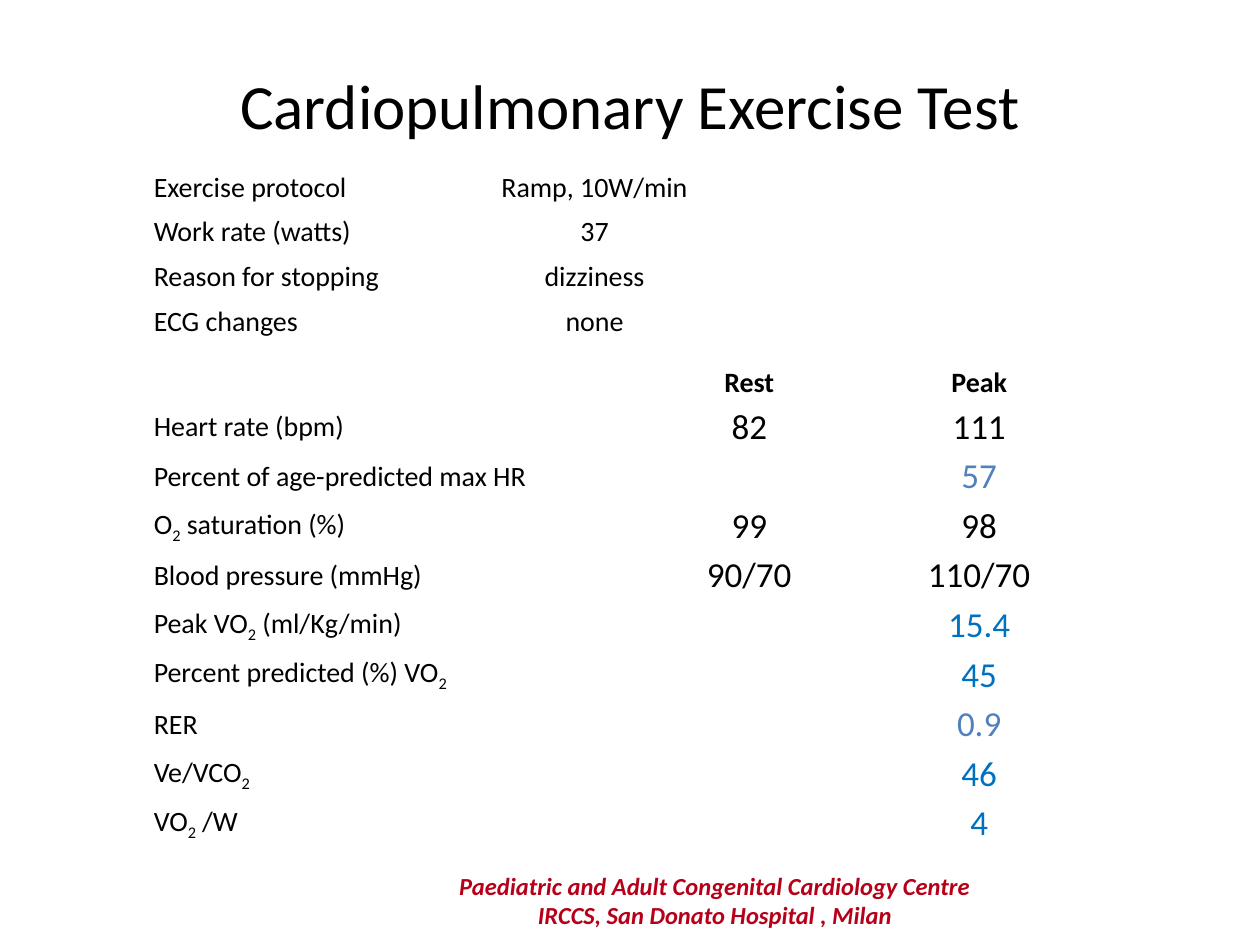
import pptx
import pptx.dml.color
import pptx.enum.text
import pptx.util

Cm = pptx.util.Cm
Pt = pptx.util.Pt
ALIGN = pptx.enum.text.PP_ALIGN
MIDDLE = pptx.enum.text.MSO_ANCHOR.MIDDLE

BLACK = "000000"
SOFT_BLUE = "4F81BD"
BLUE = "0070C0"
RED = "B60019"

PROTOCOL_ROWS = [
    ("Exercise protocol", "Ramp, 10W/min"),
    ("Work rate (watts)", "37"),
    ("Reason for stopping", "dizziness"),
    ("ECG changes", "none"),
]

# Label, value at rest, value at peak, colour of the peak value
RESULT_ROWS = [
    ("Heart rate (bpm)", "82", "111", BLACK),
    ("Percent of age-predicted max HR", "", "57", SOFT_BLUE),
    ("O₂ saturation (%)", "99", "98", BLACK),
    ("Blood pressure (mmHg)", "90/70", "110/70", BLACK),
    ("Peak VO₂ (ml/Kg/min)", "", "15.4", BLUE),
    ("Percent predicted (%) VO₂", "", "45", BLUE),
    ("RER", "", "0.9", SOFT_BLUE),
    ("Ve/VCO₂", "", "46", BLUE),
    ("VO₂ /W", "", "4", BLUE),
]


def rgb(hex_string):
    return pptx.dml.color.RGBColor.from_string(hex_string)


class SlideBuilder:
    font_name = "Calibri"

    def __init__(self, slide):
        self.slide = slide

    def style_run(self, run, size, color=BLACK, bold=False, italic=False):
        font = run.font
        font.name = self.font_name
        font.size = Pt(size)
        font.color.rgb = rgb(color)
        font.bold = bold
        font.italic = italic

    def style_frame(self, text_frame, size, **style):
        text_frame.word_wrap = True
        text_frame.vertical_anchor = MIDDLE
        for paragraph in text_frame.paragraphs:
            paragraph.alignment = ALIGN.CENTER
            for run in paragraph.runs:
                self.style_run(run, size, **style)

    def title(self, text, left, top, width, height):
        shape = self.slide.shapes.title
        shape.left, shape.top = Cm(left), Cm(top)
        shape.width, shape.height = Cm(width), Cm(height)
        shape.text_frame.text = text
        self.style_frame(shape.text_frame, 36)

    def text_box(self, text, left, top, width, height, size, **style):
        shape = self.slide.shapes.add_textbox(
            Cm(left), Cm(top), Cm(width), Cm(height))
        shape.text_frame.text = text
        self.style_frame(shape.text_frame, size, **style)

    def table(self, left, top, column_widths, row_heights):
        """Add a plain table without banding, fills or cell padding."""
        table = self.slide.shapes.add_table(
            len(row_heights), len(column_widths), Cm(left), Cm(top),
            Cm(sum(column_widths)), Cm(sum(row_heights))).table
        table.first_row = table.horz_banding = False
        for column, width in zip(table.columns, column_widths):
            column.width = Cm(width)
        for row, height in zip(table.rows, row_heights):
            row.height = Cm(height)
        for cell in table.iter_cells():
            cell.fill.background()
            cell.vertical_anchor = MIDDLE
            cell.margin_left = Cm(0.2)
            cell.margin_right = cell.margin_top = cell.margin_bottom = 0
        return table

    def label_cell(self, cell, text):
        """Write a left-aligned label, with each ₂ as a subscript run."""
        paragraph = cell.text_frame.paragraphs[0]
        for part in text.replace("₂", "|₂|").split("|"):
            if part:
                run = paragraph.add_run()
                run.text = part.replace("₂", "2")
                self.style_run(run, 16)
                if part == "₂":
                    run.font._element.set("baseline", "-25000")

    def value_cell(self, cell, text, size, **style):
        cell.text_frame.text = text
        paragraph = cell.text_frame.paragraphs[0]
        paragraph.alignment = ALIGN.CENTER
        for run in paragraph.runs:
            self.style_run(run, size, **style)


def main():
    presentation = pptx.Presentation()
    presentation.slide_width, presentation.slide_height = Cm(25.4), Cm(19.05)
    builder = SlideBuilder(
        presentation.slides.add_slide(presentation.slide_layouts[5]))

    builder.text_box(
        "Paediatric and Adult Congenital Cardiology Centre\n"
        "IRCCS, San Donato Hospital , Milan",
        8.51, 17.37, 11.81, 1.55, 14, color=RED, bold=True, italic=True)
    builder.title("Cardiopulmonary Exercise Test", 1.27, 1.12, 22.86, 1.96)

    results = builder.table(
        2.9, 7.32, [9.73, 4.75, 4.52], [0.79] + [1] * len(RESULT_ROWS))
    for column, heading in enumerate(("Rest", "Peak"), start=1):
        builder.value_cell(results.cell(0, column), heading, 16, bold=True)
    for row, (label, rest, peak, color) in enumerate(RESULT_ROWS, start=1):
        builder.label_cell(results.cell(row, 0), label)
        builder.value_cell(results.cell(row, 1), rest, 20)
        builder.value_cell(results.cell(row, 2), peak, 20, color=color)

    protocol = builder.table(
        2.9, 3.33, [6.76, 4.45], [0.9] * len(PROTOCOL_ROWS))
    for row, (label, value) in enumerate(PROTOCOL_ROWS):
        builder.label_cell(protocol.cell(row, 0), label)
        builder.value_cell(protocol.cell(row, 1), value, 16)

    presentation.save("out.pptx")


if __name__ == "__main__":
    main()
